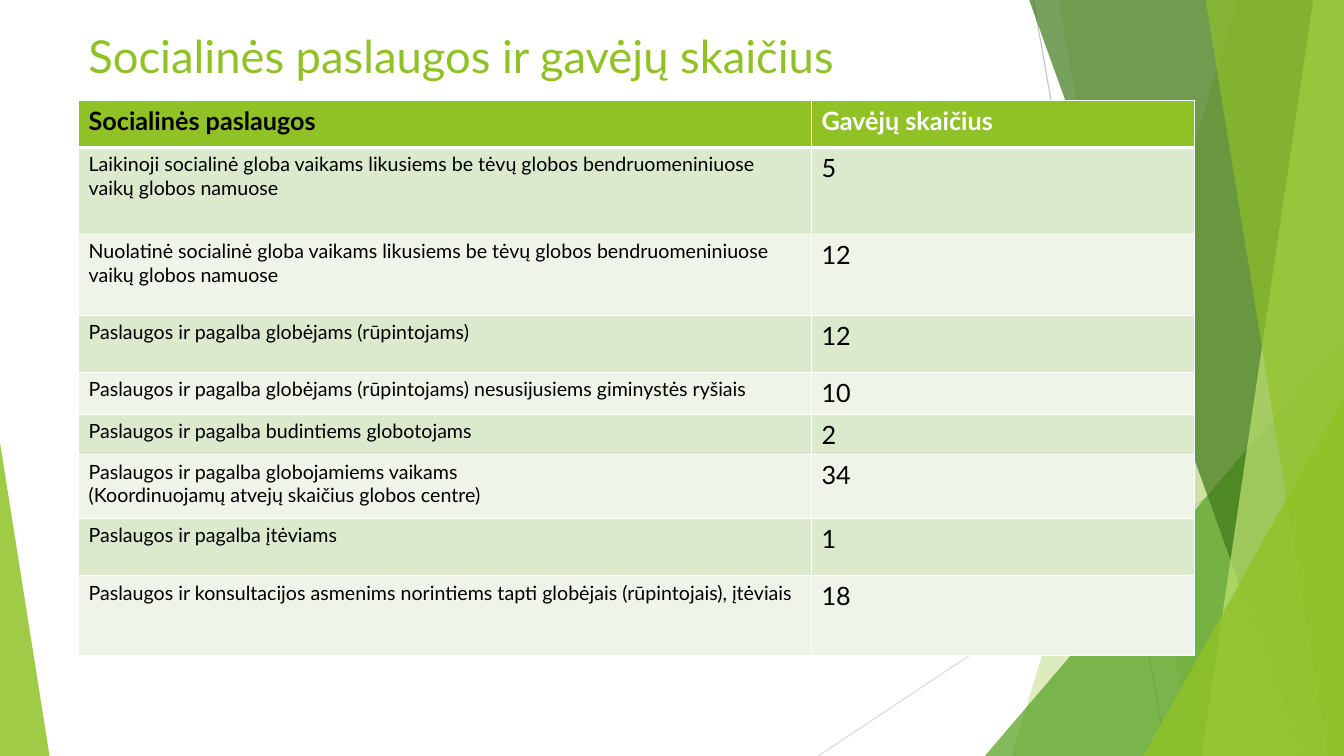
from dataclasses import dataclass
from lxml.etree import SubElement
from pptx import Presentation
from pptx.dml.color import RGBColor
from pptx.enum.shapes import MSO_CONNECTOR, MSO_SHAPE
from pptx.enum.text import MSO_ANCHOR
from pptx.oxml.ns import qn
from pptx.util import Cm, Pt


@dataclass(frozen=True)
class Theme:
    font: str = "Lato"
    white: str = "FFFFFF"
    black: str = "000000"
    lime: str = "90C226"
    green: str = "54A021"
    dark: str = "3F7819"
    pale: str = "C0E474"
    gray: str = "BFBFBF"
    mist: str = "D9D9D9"
    bands: tuple = ("DBE9CD", "EEF4E8")
    title: float = 32.4
    big: int = 18
    small: int = 14


class Page:
    def __init__(self, slide, theme):
        self.slide = slide
        self.theme = theme

    def paint(self, shape, color, alpha):
        shape.shadow.inherit = False
        shape.line.fill.background()
        shape.fill.solid()
        shape.fill.fore_color.rgb = RGBColor.from_string(color)
        tone = shape._element.spPr.find(qn("a:solidFill"))[0]
        SubElement(tone, qn("a:alpha"), val=str(alpha * 1000))

    def line(self, start, end, color):
        ends = [Cm(n) for n in start + end]
        wire = self.slide.shapes.add_connector(MSO_CONNECTOR.STRAIGHT, *ends)
        wire.line.color.rgb = RGBColor.from_string(color)
        wire.line.width = Pt(0.75)
        SubElement(wire._element.spPr, qn("a:effectLst"))

    def shard(self, tip, foot, color, alpha):
        points = [(tip, TOP), (WIDE, TOP), (WIDE, HIGH), (foot, HIGH)]
        first, *rest = [(Cm(x), Cm(y)) for x, y in points]
        pen = self.slide.shapes.build_freeform(*first)
        pen.add_line_segments(rest, close=True)
        self.paint(pen.convert_to_shape(), color, alpha)

    def peak(self, left, top, width, tip, color, alpha):
        box = [Cm(n) for n in (left, top, width, HIGH - top)]
        shape = self.slide.shapes.add_shape(MSO_SHAPE.ISOSCELES_TRIANGLE, *box)
        shape.adjustments[0] = tip
        self.paint(shape, color, alpha)

    def text(self, frame, words, size, color, bold=False):
        frame.word_wrap = True
        for i, part in enumerate(words.split("\n")):
            para = frame.add_paragraph() if i else frame.paragraphs[0]
            run = para.add_run()
            run.text = part
            run.font.name = self.theme.font
            run.font.size = Pt(size)
            run.font.bold = bold
            run.font.color.rgb = RGBColor.from_string(color)

    def title(self, words, box):
        frame = self.slide.shapes.add_textbox(*[Cm(n) for n in box]).text_frame
        frame.vertical_anchor = MSO_ANCHOR.TOP
        self.text(frame, words, self.theme.title, self.theme.lime)

    def edge(self, cell, side, width):
        props = cell._tc.get_or_add_tcPr()
        line = SubElement(props, qn("a:ln" + side), w=str(Pt(width)))
        fill = SubElement(line, qn("a:solidFill"))
        SubElement(fill, qn("a:srgbClr"), val=self.theme.white)

    def table(self, left, top, cols, rows):
        look = self.theme
        box = [Cm(n) for n in (left, top, sum(cols), sum(row[0] for row in rows))]
        grid = self.slide.shapes.add_table(len(rows), len(cols), *box).table
        for col, width in zip(grid.columns, cols):
            col.width = Cm(width)
        for i, (high, *cells) in enumerate(rows):
            grid.rows[i].height = Cm(high)
            for j, words in enumerate(cells):
                cell = grid.cell(i, j)
                for side in "LRTB":
                    thick = (side, i) in (("B", 0), ("T", 1))
                    self.edge(cell, side, 3 if thick else 1)
                cell.fill.solid()
                fill = look.bands[(i - 1) % 2] if i else look.lime
                cell.fill.fore_color.rgb = RGBColor.from_string(fill)
                size = look.small if i and not j else look.big
                color = look.white if j and not i else look.black
                self.text(cell.text_frame, words, size, color, not i)


WIDE, HIGH, TOP = 33.87, 19.05, -0.02
ROWS = [
    (1.18, "Socialinės paslaugos", "Gavėjų skaičius"),
    (2.18, "Laikinoji socialinė globa vaikams likusiems be tėvų globos "
           "bendruomeniniuose vaikų globos namuose", "5"),
    (2.04, "Nuolatinė socialinė globa vaikams likusiems be tėvų globos "
           "bendruomeniniuose vaikų globos namuose", "12"),
    (1.44, "Paslaugos ir pagalba globėjams (rūpintojams)", "12"),
    (1.06, "Paslaugos ir pagalba globėjams (rūpintojams) nesusijusiems "
           "giminystės ryšiais", "10"),
    (1.01, "Paslaugos ir pagalba budintiems globotojams", "2"),
    (1.61, "Paslaugos ir pagalba globojamiems vaikams\n"
           "(Koordinuojamų atvejų skaičius globos centre)", "34"),
    (1.44, "Paslaugos ir pagalba įtėviams", "1"),
    (2.02, "Paslaugos ir konsultacijos asmenims norintiems tapti globėjais "
           "(rūpintojais), įtėviais", "18"),
]


def main():
    deck = Presentation()
    deck.slide_width, deck.slide_height = Cm(WIDE), Cm(HIGH)
    look = Theme()
    page = Page(deck.slides.add_slide(deck.slide_layouts[6]), look)
    page.line((26.04, 0), (29.41, HIGH), look.gray)
    page.line((WIDE, 10.24), (20.62, HIGH), look.mist)
    page.shard(31.19, 25.5, look.lime, 30)
    page.shard(26.67, 30.05, look.lime, 20)
    page.peak(24.82, 8.46, 9.05, 1, look.green, 72)
    page.shard(25.93, 32.79, look.dark, 70)
    page.shard(33.1, 30.28, look.pale, 70)
    page.shard(30.38, 33.48, look.lime, 65)
    page.peak(28.81, 9.98, 5.06, 1, look.lime, 80)
    page.peak(0, 11.15, 1.25, 0, look.lime, 85)
    page.title("Socialinės paslaugos ir gavėjų skaičius", (1.98, 0.58, 29.21, 1.47))
    page.table(1.98, 2.54, (18.47, 9.65), ROWS)
    deck.save("out.pptx")


if __name__ == "__main__":
    main()
